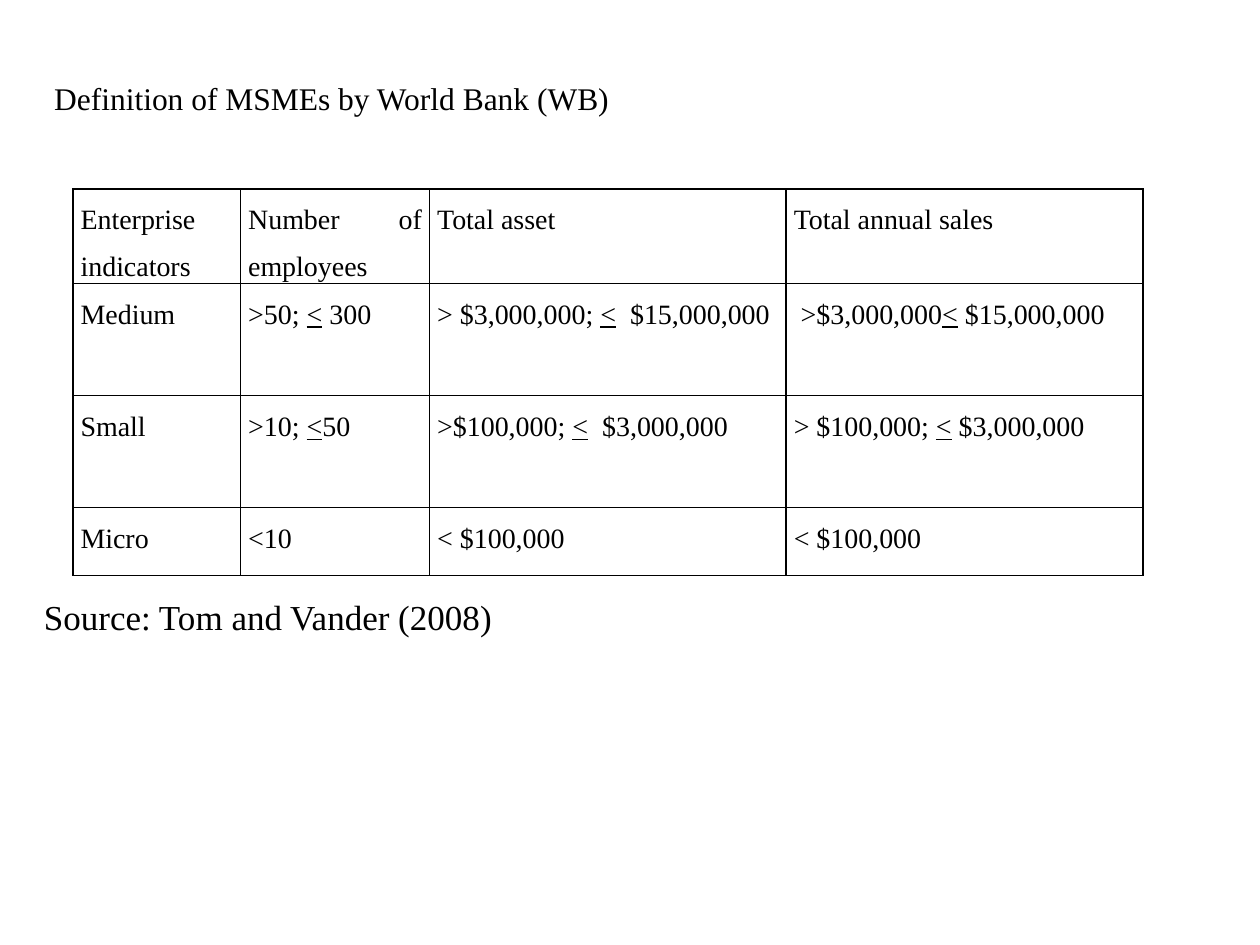
"""Build a slide that tabulates the definition of MSMEs by enterprise size."""
from lxml import etree
from pptx import Presentation
from pptx import util as u
from pptx.dml import color
from pptx.enum import text
from pptx.oxml import ns

COLORS = {"ink": "000000"}
COLUMNS = [1.33, 1.5, 2.83, 2.83]
ROWS = [0.75, 0.89, 0.89, 0.54]
CELLS = [
    ["Enterprise indicators", "Number of employees", "Total asset", "Total annual sales"],
    ["Medium", ">50; _<_ 300", "> $3,000,000; _<_  $15,000,000", " >$3,000,000_<_ $15,000,000"],
    ["Small", ">10; _<_50", ">$100,000; _<_  $3,000,000", "> $100,000; _<_ $3,000,000"],
    ["Micro", "<10", "< $100,000", "< $100,000"],
]


class Deck:
    """Holds the text style and the current slide."""

    font = "Times New Roman"
    frame = {
        "word_wrap": True,
        "auto_size": text.MSO_AUTO_SIZE.NONE,
        "vertical_anchor": text.MSO_ANCHOR.MIDDLE,
    }
    cell = {
        "margin_left": u.Inches(0.06),
        "margin_right": u.Inches(0.06),
        "margin_top": 0,
        "margin_bottom": 0,
    }

    def __init__(self):
        """Open a presentation with one title-only slide."""
        self.prs = Presentation()
        self.prs.slide_width, self.prs.slide_height = u.Inches(10), u.Inches(7.5)
        self.s = self.prs.slides.add_slide(self.prs.slide_layouts[5])

    def apply(self, target, values):
        """Set each attribute named in a dict of format values."""
        for name, value in values.items():
            setattr(target, name, value)

    def paragraph(self, p, content, size, **layout):
        """Fill a paragraph, underlining the parts between underscores."""
        self.apply(p, layout)
        for i, part in enumerate(content.split("_")):
            r = p.add_run()
            r.text = part
            self.apply(r.font, {"name": self.font, "size": u.Pt(size)})
            r.font.color.rgb = color.RGBColor.from_string(COLORS["ink"])
            if i % 2:
                r.font.underline = True

    def line(self, sp, content, size):
        """Put one left-aligned line into a shape."""
        tf = sp.text_frame
        self.apply(tf, self.frame)
        self.paragraph(tf.paragraphs[0], content, size, alignment=text.PP_ALIGN.LEFT)

    def title(self, content, size, box):
        """Place the title placeholder."""
        sp = self.s.shapes.title
        self.apply(sp, dict(zip(("left", "top", "width", "height"), map(u.Inches, box))))
        self.line(sp, content, size)

    def label(self, content, size, box):
        """Add a text box."""
        self.line(self.s.shapes.add_textbox(*map(u.Inches, box)), content, size)

    def border(self, cell, width):
        """Draw all four borders of a cell."""
        tc_pr = cell._tc.get_or_add_tcPr()
        for side in ("a:lnL", "a:lnR", "a:lnT", "a:lnB"):
            ln = etree.SubElement(tc_pr, ns.qn(side), w=str(u.Pt(width)))
            fill = etree.SubElement(ln, ns.qn("a:solidFill"))
            etree.SubElement(fill, ns.qn("a:srgbClr"), val=COLORS["ink"])

    def table(self, rows, widths, heights, left, top, size):
        """Add a plain ruled table."""
        box = map(u.Inches, (left, top, sum(widths), sum(heights)))
        table = self.s.shapes.add_table(len(rows), len(widths), *box).table
        self.apply(table, {"first_row": False, "horz_banding": False})
        for column, width in zip(table.columns, widths):
            column.width = u.Inches(width)
        for row, height, contents in zip(table.rows, heights, rows):
            row.height = u.Inches(height)
            for cell, content in zip(row.cells, contents):
                self.apply(cell, self.cell)
                self.border(cell, 1)
                cell.fill.background()
                self.paragraph(cell.text_frame.paragraphs[0], content, size,
                               alignment=text.PP_ALIGN.JUSTIFY, line_spacing=1.5)


def main():
    """Build and save the slide."""
    deck = Deck()
    deck.table(CELLS, COLUMNS, ROWS, 0.58, 1.5, 16)
    deck.title("Definition of MSMEs by World Bank (WB)", 18, (0.33, 0.58, 6, 0.4))
    deck.label("Source: Tom and Vander (2008)", 20, (0.25, 4.67, 8, 0.44))
    deck.prs.save("out.pptx")


if __name__ == "__main__":
    main()
